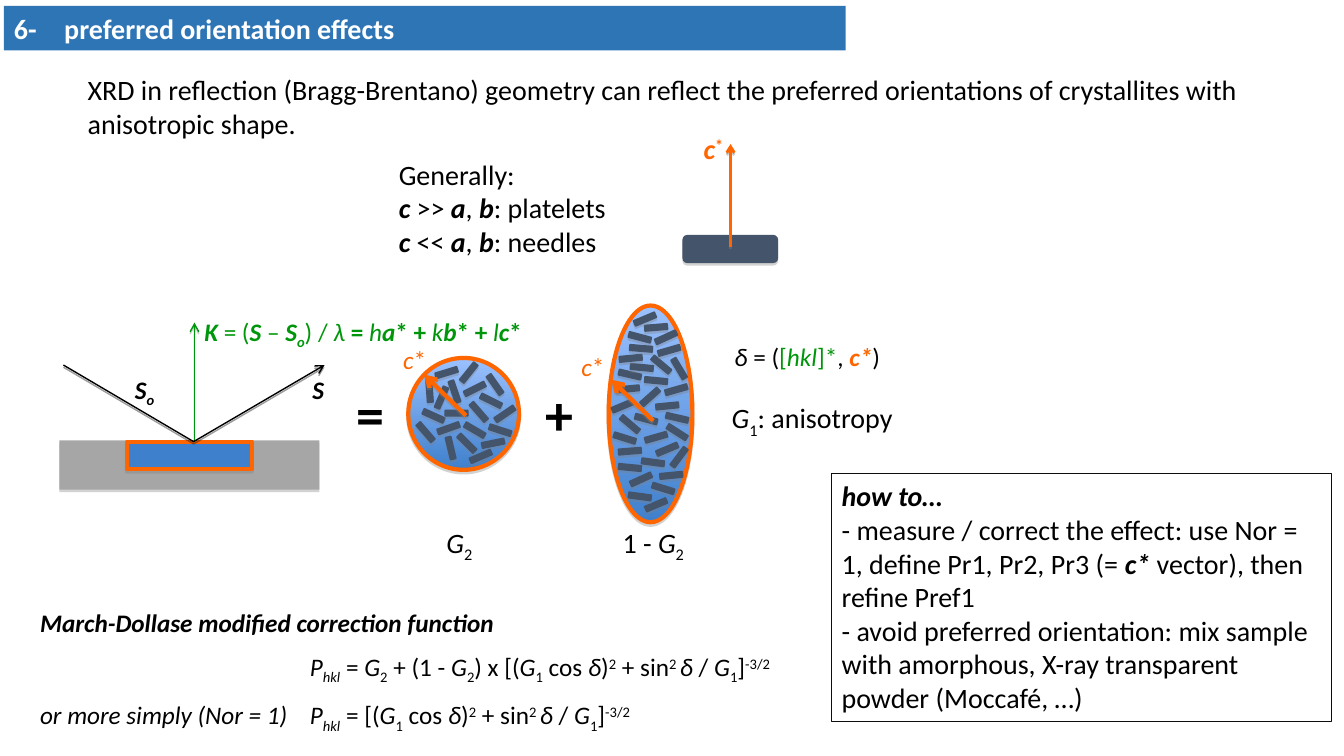
from collections import namedtuple

from lxml.etree import SubElement
from pptx import Presentation
from pptx.dml.color import RGBColor
from pptx.enum.shapes import MSO_CONNECTOR as Link, MSO_SHAPE as Preset
from pptx.enum.text import MSO_ANCHOR as Anchor, PP_ALIGN as Align
from pptx.oxml.ns import qn
from pptx.util import Cm, Pt

COLORS = {
    "black": "000000", "white": "FFFFFF", "band": "2E75B6", "orange": "FF6600",
    "green": "00960B", "slate": "44546A", "slab": "A6A6A6", "blue": "3F80CD",
    "sky": "9BC1FF", "frame": "0D0D0D", "shade": "808080",
}
TINTS = {"g": "green", "o": "orange"}

ROUND_CRYSTALS = [
    (0.66, 0.28, 343), (0.86, 0.76, 71), (1.88, 0.58, 55), (0.33, 1.37, 204.4),
    (1.37, 0.69, 153.5), (0.53, 0.91, 113.5), (0.23, 0.74, 86), (1.47, 1.27, 49.1),
    (1.78, 0.99, 26.5), (0.91, 1.3, 0), (0.71, 1.68, 340.7), (2.13, 1.32, 325.8),
    (1.22, 0.28, 308.8), (0.13, 1.78, 49.1), (1.37, 1.73, 30.4), (1.17, 2.06, 44.8),
    (0.76, 2.18, 76.9), (1.83, 2.06, 168.7), (1.52, 2.39, 157), (2.01, 1.73, 198.4),
]
LONG_CRYSTALS = [
    (0.23, 1.65, 13), (1.42, 2.74, 13), (0.89, 0.46, 355.4), (0.23, 3.58, 355.4),
    (1.14, 0.71, 335.6), (0.51, 4.29, 335.6), (0.05, 2.44, 337.3), (1.17, 3.53, 337.3),
    (0.89, 4.93, 337.3), (0.23, 2.9, 40.2), (1.02, 1.4, 40.2), (0.48, 0.71, 14.9),
    (0.64, 2.77, 14.9), (1.4, 2.03, 344.1), (0.89, 3.23, 344.1), (0.48, 4.72, 7.6),
    (0.81, 3.86, 7.6), (1.07, 4.52, 17.4), (0.1, 3.25, 17.4), (0.18, 2.01, 354.4),
    (1.17, 2.44, 354.4), (1.27, 4.19, 354.4), (0.23, 3.99, 5.6), (0.89, 1.8, 5.6),
    (0.53, 1.47, 5.6), (0.25, 1.24, 354.4), (0.51, 0.99, 4.8), (0.74, 2.21, 318.3),
    (1.47, 3.73, 306.9), (1.42, 3.1, 32.5), (1.47, 1.5, 59.2), (1.22, 1.04, 344.1),
    (0.61, 0.25, 337.3),
]


class Box(namedtuple("Box", "left top width height")):
    def inner(self, left, top, width, height):
        return Box(self.left + left, self.top + top, width, height)

    def point(self, x, y):
        return Cm(self.left + x), Cm(self.top + y)

    def lengths(self):
        return [Cm(value) for value in self]


def rgb(name):
    return RGBColor.from_string(COLORS[name])


def write(frame, lines, size=20, color="black", wrap=False, spacing=None, tab=None):
    frame.word_wrap = wrap
    for index, line in enumerate(lines):
        para = frame.add_paragraph() if index else frame.paragraphs[0]
        para.alignment = Align.LEFT
        if spacing:
            para.line_spacing = spacing
        if tab:
            stops = SubElement(para._p.get_or_add_pPr(), qn("a:tabLst"))
            SubElement(stops, qn("a:tab"), pos=str(Cm(tab)), algn="l")
        for text, style in line:
            span = para.add_run()
            span.text = text
            font = span.font
            font.name, font.size = "Calibri", Pt(size)
            font.bold, font.italic = "b" in style, "i" in style
            tint = next((TINTS[mark] for mark in style if mark in TINTS), color)
            font.color.rgb = rgb(tint)
            for mark, baseline in (("_", "-25000"), ("^", "30000")):
                if mark in style:
                    span._r.get_or_add_rPr().set("baseline", baseline)


def add_text(page, box, lines, **style):
    write(page.shapes.add_textbox(*box.lengths()).text_frame, lines, **style)


def cast_shadow(shape, color="shade", alpha=35, distance=1.8):
    properties = shape._element.spPr
    effects = properties.find(qn("a:effectLst"))
    if effects is None:
        effects = SubElement(properties, qn("a:effectLst"))
    shadow = SubElement(effects, qn("a:outerShdw"), blurRad="0", dist=str(Pt(distance)),
                        dir="5400000", rotWithShape="0")
    tone = SubElement(shadow, qn("a:srgbClr"), val=COLORS[color])
    SubElement(tone, qn("a:alpha"), val=str(alpha * 1000))


def add_block(page, preset, box, fill=None, line=None, width=3, shadow=True):
    shape = page.shapes.add_shape(preset, *box.lengths())
    shape.shadow.inherit = False
    if isinstance(fill, tuple):
        shape.fill.gradient()
        shape.fill.gradient_angle = 270
        for stop, name in zip(shape.fill.gradient_stops, fill):
            stop.color.rgb = rgb(name)
    elif fill:
        shape.fill.solid()
        shape.fill.fore_color.rgb = rgb(fill)
    else:
        shape.fill.background()
    if line:
        shape.line.color.rgb = rgb(line)
        shape.line.width = Pt(width)
    else:
        shape.line.fill.background()
    if shadow:
        cast_shadow(shape)
    return shape


def finish_arrow(shape, color, width, shade="shade"):
    shape.line.color.rgb = rgb(color)
    shape.line.width = Pt(width)
    SubElement(shape._element.spPr.find(qn("a:ln")), qn("a:tailEnd"), type="arrow")
    cast_shadow(shape, shade, alpha=38, distance=1.6)


def add_arrow(page, start, end, color, width):
    finish_arrow(page.shapes.add_connector(Link.STRAIGHT, *start, *end), color, width)


def draw_heading(page, box):
    band = add_block(page, Preset.RECTANGLE, box, "band", shadow=False)
    write(band.text_frame, [[("6-\tpreferred orientation effects", "b")]], color="white", wrap=True)


def draw_shapes_rule(page, box):
    rules = [[("c", "bi"), (sign, ""), ("a", "bi"), (", ", ""), ("b", "bi"), (habit, "")]
             for sign, habit in ((" >> ", ": platelets"), (" << ", ": needles"))]
    add_text(page, box.inner(0, 0.64, 5.79, 2.82), [[("Generally:", "")], *rules])
    add_block(page, Preset.ROUNDED_RECTANGLE, box.inner(7.4, 2.72, 2.41, 0.71), "slate")
    add_arrow(page, box.point(8.61, 3.02), box.point(8.61, 0.43), "orange", 2)
    add_text(page, box.inner(7.68, 0, 1.09, 0.97), [[("c", "bi"), ("*", "b^")]],
             color="orange", wrap=True)


def draw_diffraction(page, box):
    add_block(page, Preset.RECTANGLE, box.inner(0, 3.25, 6.55, 1.24), "slab")
    add_block(page, Preset.RECTANGLE, box.inner(1.7, 3.28, 3.15, 0.69), "blue", "orange")
    add_arrow(page, box.point(3.4, 3.25), box.point(3.4, 0.28), "green", 1)
    outline = page.shapes.build_freeform(*box.point(0.1, 1.35))
    outline.add_line_segments([box.point(3.38, 3.28), box.point(6.68, 1.35)], close=False)
    beam = outline.convert_to_shape()
    beam.shadow.inherit = False
    beam.fill.background()
    finish_arrow(beam, "black", 1, "black")
    vector = [("K", "bi"), (" = (", ""), ("S", "bi"), (" – ", ""), ("S", "bi"), ("o", "bi_"),
              (") / ", ""), ("λ", "i"), (" = ", "b"), ("h", "i"), ("a", "bi"), ("* + ", "b"),
              ("k", "i"), ("b", "bi"), ("* + ", "b"), ("l", "i"), ("c", "bi"), ("*", "b")]
    add_text(page, box.inner(3.4, 0, 8.59, 1.02), [vector], size=18, color="green")
    add_text(page, box.inner(1.65, 1.45, 1.17, 1.02), [[("S", "bi"), ("o", "bi_")]], size=18)
    add_text(page, box.inner(6.12, 1.45, 0.97, 1.02), [[("S", "bi")]], size=18)


def draw_powder(page, box, crystals, center, label, caption, name):
    add_block(page, Preset.OVAL, box, ("sky", "blue"), "orange")
    for x, y, angle in crystals:
        crystal = add_block(page, Preset.ROUNDED_RECTANGLE, box.inner(x, y, 0.61, 0.18), "slate")
        crystal.rotation = angle
    x, y = center
    add_arrow(page, box.point(x, y), box.point(x - 1.05, y - 1.03), "orange", 3)
    add_text(page, box.inner(*label, 1.35, 1.02), [[("c", "i"), ("*", "")]],
             size=18, color="orange", wrap=True)
    add_text(page, box.inner(*caption, 1.12), [name])


def draw_mixture(page, box):
    for sign, left in (("=", 0), ("+", 4.75)):
        add_text(page, box.inner(left, 1.75, 0.97, 1.96), [[(sign, "b")]], size=40, wrap=True)
    share = [("G", "i"), ("2", "_")]
    draw_powder(page, box.inner(1.55, 1.32, 2.79, 2.82), ROUND_CRYSTALS, (1.45, 1.45),
                (-0.38, -0.46), (0.71, 4.09, 1.27), share)
    draw_powder(page, box.inner(6.6, 0, 2.11, 5.46), LONG_CRYSTALS, (1.12, 2.9),
                (-0.94, 1.04), (0.1, 5.41, 2.11), [("1 - ", "")] + share)
    angle = [("δ", "i"), (" = (", ""), ("[", "g"), ("hkl", "gi"), ("]*", "g"), (", ", ""),
             ("c*", "obi"), (")", "")]
    add_text(page, box.inner(9.52, 0.78, 4.24, 1.02), [angle], size=18)
    add_text(page, box.inner(9.45, 2.28, 4.62, 1.12),
             [[("G", "i"), ("1", "_"), (": anisotropy", "")]])


def draw_correction(page, box):
    factor = [("P", "i"), ("hkl", "i_")]
    share = [("G", "i"), ("2", "_")]
    power = [("[(", ""), ("G", "i"), ("1", "_"), (" cos ", ""), ("δ", "i"), (")", ""),
             ("2", "^"), (" + sin", ""), ("2 ", "^"), ("δ", "i"), (" / ", ""), ("G", "i"),
             ("1", "_"), ("]", ""), ("-3/2", "^")]
    add_text(page, box, [
        [("March-Dollase modified correction function", "bi")],
        [("\t", "i"), *factor, (" = ", ""), *share, (" + (1 - ", ""), *share, (") x ", ""), *power],
        [("or more simply (Nor = 1)\t", "i"), *factor, (" = ", ""), *power],
    ], size=18, spacing=1.4, tab=6.8)


def draw_advice(page, box):
    panel = add_block(page, Preset.RECTANGLE, box, line="frame", width=0.75, shadow=False)
    panel.text_frame.vertical_anchor = Anchor.TOP
    write(panel.text_frame, [
        [("how to…", "bi")],
        [("- measure / correct the effect: use Nor = 1, define Pr1, Pr2, Pr3 (= ", ""),
         ("c* ", "bi"), ("vector), then refine Pref1", "")],
        [("- avoid preferred orientation: mix sample with amorphous, X-ray transparent "
          "powder (Moccafé, …)", "")],
    ], wrap=True)


def main():
    deck = Presentation()
    deck.slide_width, deck.slide_height = Cm(33.87), Cm(19.05)
    page = deck.slides.add_slide(deck.slide_layouts[6])
    draw_heading(page, Box(0.1, 0.15, 21.21, 1.12))
    add_text(page, Box(1.96, 1.7, 29.64, 2.82), [[(
        "XRD in reflection (Bragg-Brentano) geometry can reflect the preferred orientations "
        "of crystallites with anisotropic shape.", "")]], wrap=True)
    draw_shapes_rule(page, Box(9.8, 3.2, 9.81, 3.46))
    draw_diffraction(page, Box(1.5, 7.85, 11.99, 4.49))
    draw_mixture(page, Box(8.74, 7.7, 14.07, 6.53))
    draw_correction(page, Box(0.76, 14.88, 19.56, 3.38))
    draw_advice(page, Box(20.96, 11.94, 12.6, 6.25))
    deck.save("out.pptx")


if __name__ == "__main__":
    main()
